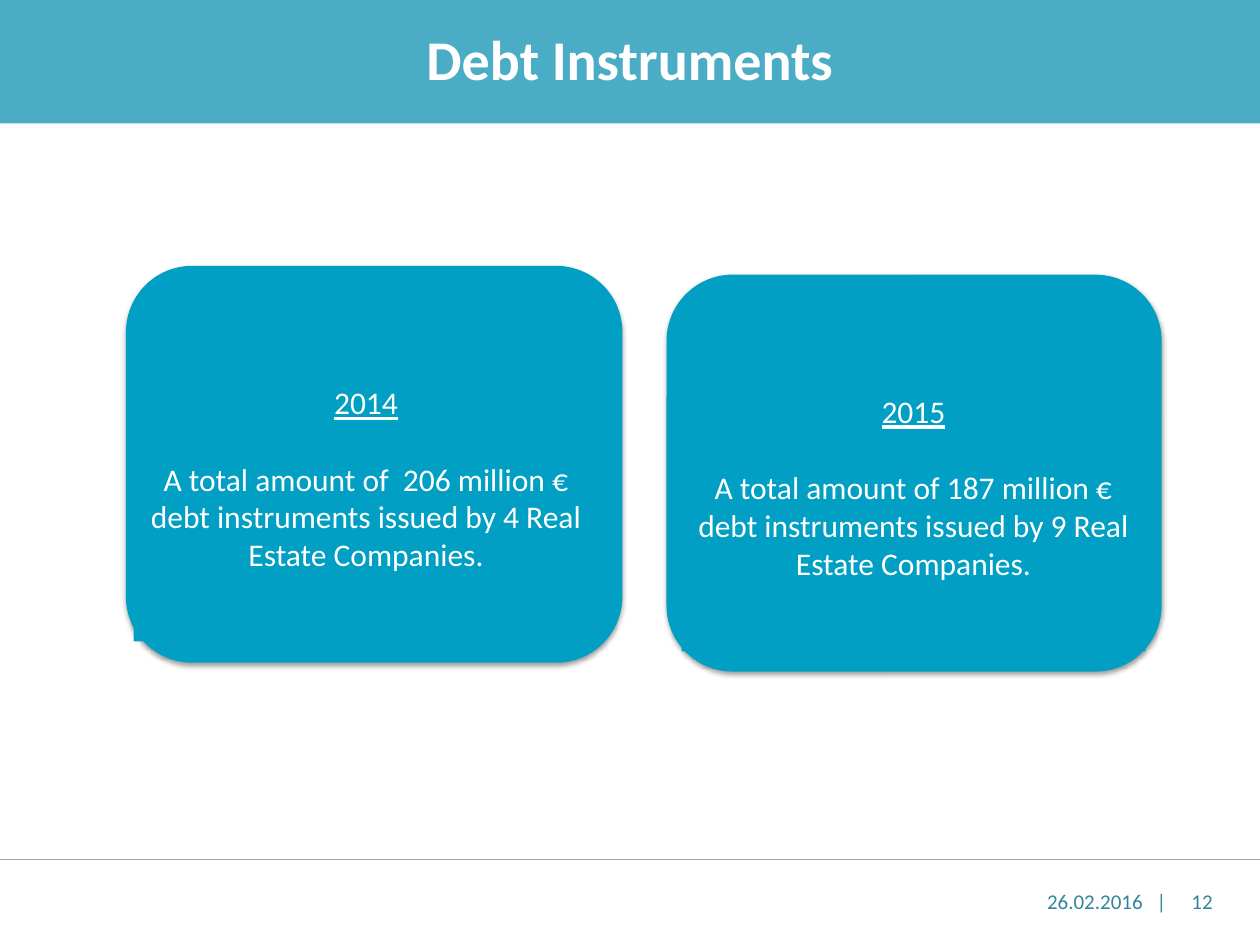
import pptx
import pptx.dml.color
import pptx.enum.shapes
import pptx.enum.text
import pptx.oxml
import pptx.oxml.ns
import pptx.util

Inches, Pt = pptx.util.Inches, pptx.util.Pt
KIND = pptx.enum.shapes.MSO_SHAPE
ALIGN = pptx.enum.text.PP_ALIGN
NS = pptx.oxml.ns.nsdecls("a")

# Content
TITLE = "Debt Instruments"
DATE, NUMBER = "26.02.2016\t|", "12"
# year, text, card box, text box
CARDS = [
    ("2014", "A total amount of  206 million € debt instruments issued by 4 Real Estate Companies.",
     (1, 2.11, 3.94, 3.15), (1.06, 2.5, 3.69, 2.59)),
    ("2015", "A total amount of 187 million € debt instruments issued by 9 Real Estate Companies.",
     (5.29, 2.18, 3.93, 3.15), (5.41, 2.56, 3.68, 2.61)),
]
BAND, BLUE, TEAL, GREY, WHITE = "4BACC6", "009FC3", "31859C", "A6A6A6", "FFFFFF"
SHADOW = (f'<a:effectLst {NS}><a:outerShdw blurRad="{Pt(3.1)}" dist="{Pt(1.6)}" '
          'dir="5400000" rotWithShape="0"><a:srgbClr val="000000">'
          '<a:alpha val="38000"/></a:srgbClr></a:outerShdw></a:effectLst>')


def color(code):
    return pptx.dml.color.RGBColor.from_string(code)


def block(home, kind, box, fill):
    shape = home.add_shape(kind, *map(Inches, box))
    shape.shadow.inherit = False
    shape.fill.solid()
    shape.fill.fore_color.rgb = color(fill)
    shape.line.fill.background()
    return shape


def write(shape, lines, inset, align=ALIGN.CENTER):
    """Fill a shape with (text, font values) lines."""
    frame = shape.text_frame
    frame.word_wrap = True
    frame.vertical_anchor = pptx.enum.text.MSO_ANCHOR.MIDDLE
    for side, gap in zip(("left", "top", "right", "bottom"), inset):
        setattr(frame, "margin_" + side, Inches(gap))
    for i, (text, look) in enumerate(lines):
        para = frame.add_paragraph() if i else frame.paragraphs[0]
        para.alignment = align
        run = para.add_run()
        run.text = text
        tint = look.get("tint", WHITE)
        run.font.color.rgb = color(tint)
        style = {"name": "Calibri", "size": Pt(look["size"]),
                 "bold": look.get("bold", False),
                 "underline": look.get("underline", False)}
        for key, value in style.items():
            setattr(run.font, key, value)
    return frame


deck = pptx.Presentation()
deck.slide_width, deck.slide_height = Inches(10), Inches(7.5)
slide = deck.slides.add_slide(deck.slide_layouts[6])
shapes = slide.shapes

# Footer rule
rule = shapes.add_connector(pptx.enum.shapes.MSO_CONNECTOR.STRAIGHT,
                            0, Inches(6.82), Inches(10), Inches(6.82))
rule.line.color.rgb = color(GREY)
rule.line.width = Pt(0.75)
rule._element.spPr.append(pptx.oxml.parse_xml(f"<a:effectLst {NS}/>"))

# Title band
band = block(shapes, KIND.RECTANGLE, (0, 0, 10, 0.98), BAND)
write(band, [(TITLE, {"size": 32, "bold": True})], (0.1, 0.05, 0.1, 0.1))

# Date and slide number
small = {"size": 12, "tint": TEAL}
date = shapes.add_textbox(*map(Inches, (8.09, 6.95, 1.41, 0.4)))
para = date.text_frame.paragraphs[0]
para._p.get_or_add_pPr().append(pptx.oxml.parse_xml(
    f'<a:tabLst {NS}><a:tab pos="{Inches(0.87)}" algn="l"/></a:tabLst>'))
write(date, [(DATE, small)], (0.22, 0.05, 0.1, 0.05), ALIGN.LEFT)
page = shapes.add_textbox(*map(Inches, (9.35, 6.95, 0.38, 0.4)))
write(page, [(NUMBER, small)], (0.1, 0.05, 0.1, 0.05))

# Year cards
for year, text, outer, inner in CARDS:
    group = shapes.add_group_shape().shapes
    card = block(group, KIND.ROUNDED_RECTANGLE, outer, BLUE)
    props = card._element.spPr
    props.replace(props.find(pptx.oxml.ns.qn("a:effectLst")),
                  pptx.oxml.parse_xml(SHADOW))
    panel = block(group, KIND.RECTANGLE, inner, BLUE)
    frame = write(panel, [(year, {"size": 18, "underline": True}),
                          (text, {"size": 18})], (0.09,) * 4)
    frame.paragraphs[1].space_before = Pt(22)

deck.save("out.pptx")
